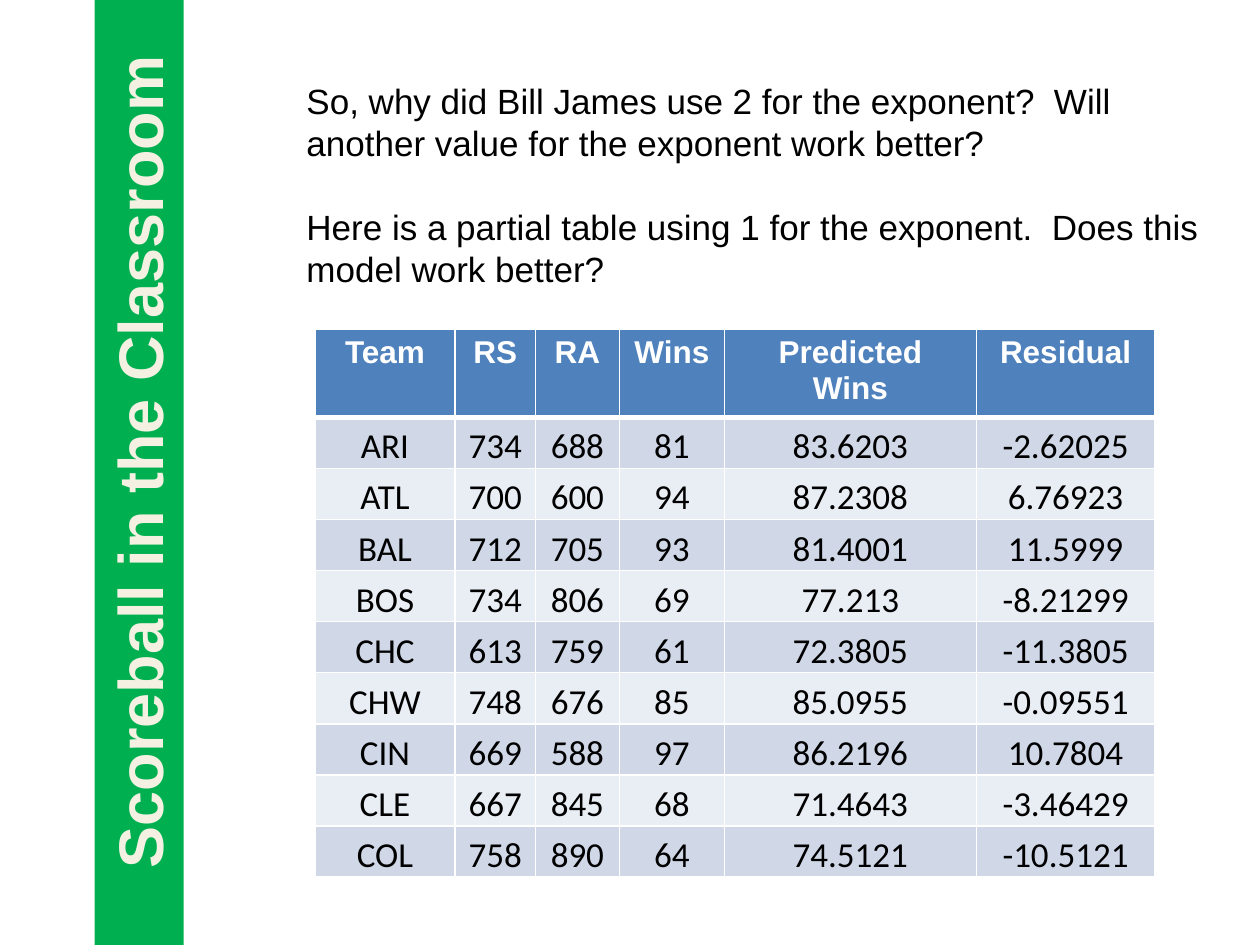
from dataclasses import dataclass

from lxml.etree import SubElement
from pptx import Presentation
from pptx.dml.color import RGBColor
from pptx.enum.shapes import MSO_SHAPE
from pptx.enum.text import MSO_ANCHOR, PP_ALIGN
from pptx.oxml.ns import qn
from pptx.util import Pt


@dataclass(frozen=True)
class Theme:
    heading_font: str = "Arial"
    number_font: str = "Calibri"
    title_size: int = 36
    body_size: int = 20
    header_size: int = 18
    black: str = "000000"
    white: str = "FFFFFF"
    cream: str = "F4F1E3"
    green: str = "00B050"
    header_fill: str = "4F81BD"
    band_fills: tuple = ("D0D8E8", "E9EDF4")


theme = Theme()


def add_text(paragraph, text, font, size, color, bold=False):
    run = paragraph.add_run()
    run.text = text
    run.font.name = font
    run.font.size = Pt(size)
    run.font.bold = bold
    run.font.color.rgb = RGBColor.from_string(color)


def add_borders(cell, bottom_width):
    properties = cell._tc.get_or_add_tcPr()
    widths = {"a:lnL": 1, "a:lnR": 1, "a:lnT": 1, "a:lnB": bottom_width}
    for position, (tag, width) in enumerate(widths.items()):
        line = SubElement(properties, qn(tag), w=str(Pt(width)))
        fill = SubElement(line, qn("a:solidFill"))
        SubElement(fill, qn("a:srgbClr"), val=theme.white)
        properties.insert(position, line)  # borders come before the cell fill


presentation = Presentation()
presentation.slide_width = Pt(720)
presentation.slide_height = Pt(540)
slide = presentation.slides.add_slide(presentation.slide_layouts[6])

# Questions above the table
questions = [
    "So, why did Bill James use 2 for the exponent?  Will another value for the exponent work better?",
    "Here is a partial table using 1 for the exponent.  Does this model work better?",
]
question_box = slide.shapes.add_textbox(Pt(168), Pt(42), Pt(528), Pt(177))
question_frame = question_box.text_frame
question_frame.word_wrap = True
for index, question in enumerate(questions):
    paragraph = question_frame.add_paragraph() if index else question_frame.paragraphs[0]
    paragraph.space_before = Pt(24 * index)
    add_text(paragraph, question, theme.heading_font, theme.body_size, theme.black)

# Table of teams
rows = [
    ("Team", "RS", "RA", "Wins", "Predicted Wins", "Residual"),
    ("ARI", "734", "688", "81", "83.6203", "-2.62025"),
    ("ATL", "700", "600", "94", "87.2308", "6.76923"),
    ("BAL", "712", "705", "93", "81.4001", "11.5999"),
    ("BOS", "734", "806", "69", "77.213", "-8.21299"),
    ("CHC", "613", "759", "61", "72.3805", "-11.3805"),
    ("CHW", "748", "676", "85", "85.0955", "-0.09551"),
    ("CIN", "669", "588", "97", "86.2196", "10.7804"),
    ("CLE", "667", "845", "68", "71.4643", "-3.46429"),
    ("COL", "758", "890", "64", "74.5121", "-10.5121"),
]
column_widths = [80, 46, 48, 60, 144, 102]
row_height = 29.2
table = slide.shapes.add_table(
    len(rows), len(column_widths), Pt(180), Pt(188),
    Pt(sum(column_widths)), Pt(row_height * len(rows)),
).table
for column, width in zip(table.columns, column_widths):
    column.width = Pt(width)

for row_index, values in enumerate(rows):
    table.rows[row_index].height = Pt(row_height)
    is_header = row_index == 0
    for column_index, value in enumerate(values):
        cell = table.cell(row_index, column_index)
        paragraph = cell.text_frame.paragraphs[0]
        paragraph.alignment = PP_ALIGN.CENTER
        cell.fill.solid()
        if is_header:
            fill = theme.header_fill
            add_text(paragraph, value, theme.heading_font, theme.header_size, theme.white, bold=True)
        else:
            fill = theme.band_fills[(row_index - 1) % 2]
            cell.vertical_anchor = MSO_ANCHOR.BOTTOM
            cell.margin_left = cell.margin_right = cell.margin_top = Pt(0.75)
            cell.margin_bottom = Pt(0)
            add_text(paragraph, value, theme.number_font, theme.body_size, theme.black)
        cell.fill.fore_color.rgb = RGBColor.from_string(fill)
        add_borders(cell, bottom_width=3 if is_header else 1)

# Vertical title bar
title_bar = slide.shapes.add_shape(
    MSO_SHAPE.RECTANGLE, Pt(-196.5), Pt(238.5), Pt(552), Pt(51)
)
title_bar.rotation = 270
title_bar.shadow.inherit = False
title_bar.fill.solid()
title_bar.fill.fore_color.rgb = RGBColor.from_string(theme.green)
title_bar.line.fill.background()
title_frame = title_bar.text_frame
title_frame.word_wrap = True
title_frame.vertical_anchor = MSO_ANCHOR.TOP
paragraph = title_frame.paragraphs[0]
paragraph.alignment = PP_ALIGN.CENTER
add_text(paragraph, "Scoreball in the Classroom", theme.heading_font, theme.title_size, theme.cream, bold=True)

presentation.save("out.pptx")
